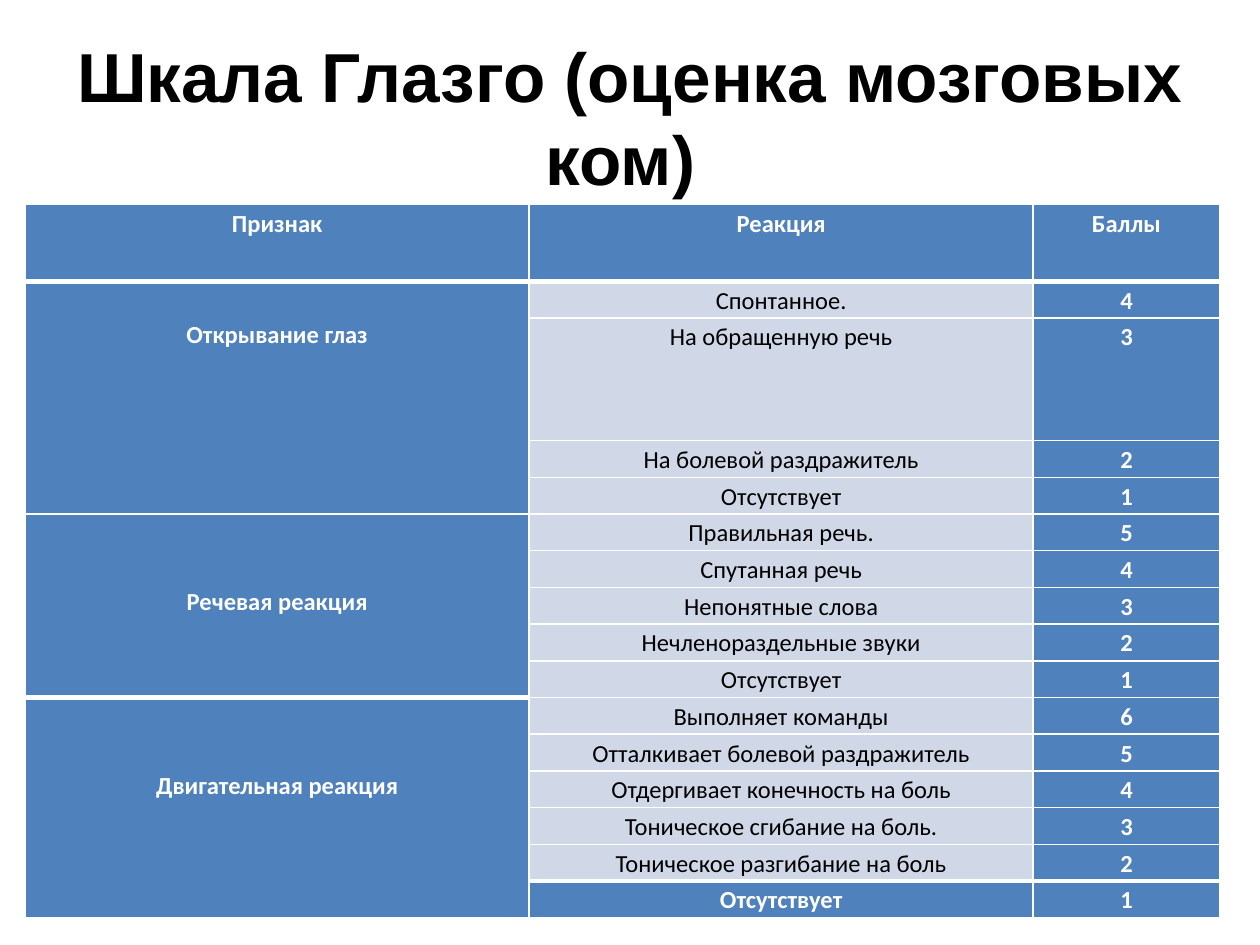
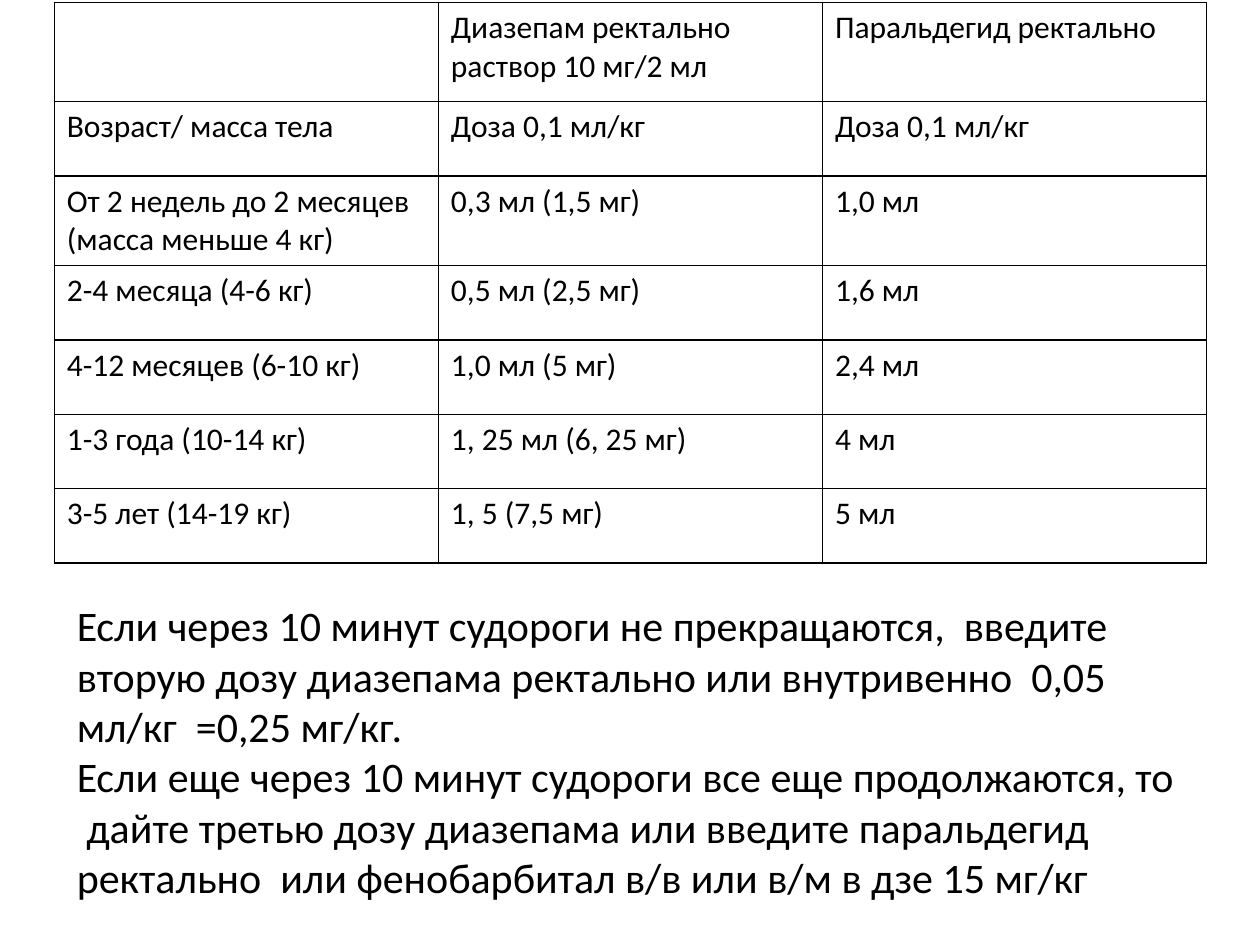
from lxml.etree import SubElement
from pptx import Presentation
from pptx.dml.color import RGBColor
from pptx.enum.text import MSO_ANCHOR, MSO_AUTO_SIZE, PP_ALIGN
from pptx.oxml.ns import qn
from pptx.util import Pt

# Shared look
WHITE, BLACK = "FFFFFF", "000000"
BLUE, PALE_BLUE = "4F81BD", "D0D8E8"
TITLE_ONLY = 5
LINE_STEP = 19.7  # height of one 14 pt line at 1.15 spacing

# Coma scale: sign, lines it is lowered by, reactions from the highest score to 1
COMA_HEADER = ["Признак", "Реакция", "Баллы"]
COMA_SIGNS = [
    ("Открывание глаз", 1, [
        "Спонтанное.", "На обращенную речь", "На болевой раздражитель",
        "Отсутствует"]),
    ("Речевая реакция", 2, [
        "Правильная речь.", "Спутанная речь", "Непонятные слова",
        "Нечленораздельные звуки", "Отсутствует"]),
    ("Двигательная реакция", 2, [
        "Выполняет команды", "Отталкивает болевой раздражитель",
        "Отдергивает конечность на боль", "Тоническое сгибание на боль.",
        "Тоническое разгибание на боль", "Отсутствует"]),
]
THICK_TOPS = {(1, 0), (1, 1), (1, 2), (10, 0), (15, 1), (15, 2)}

DOSES = [
    ["", "Диазепам ректально раствор 10 мг/2 мл", "Паральдегид ректально"],
    ["Возраст/ масса тела", "Доза 0,1 мл/кг", "Доза 0,1 мл/кг"],
    ["От 2 недель до 2 месяцев (масса меньше 4 кг)", "0,3 мл (1,5 мг)", "1,0 мл"],
    ["2-4 месяца (4-6 кг)", "0,5 мл (2,5 мг)", "1,6 мл"],
    ["4-12 месяцев (6-10 кг)", "1,0 мл (5 мг)", "2,4 мл"],
    ["1-3 года (10-14 кг)", "1, 25 мл (6, 25 мг)", "4 мл"],
    ["3-5 лет (14-19 кг)", "1, 5 (7,5 мг)", "5 мл"],
]
ADVICE = (
    "Если через 10 минут судороги не прекращаются,  введите вторую дозу "
    "диазепама ректально или внутривенно  0,05 мл/кг  =0,25 мг/кг. \v"
    "Если еще через 10 минут судороги все еще продолжаются, то  дайте третью "
    "дозу диазепама или введите паральдегид ректально  или фенобарбитал "
    "в/в или в/м в дзе 15 мг/кг")


def rgb(hex_code):
    return RGBColor.from_string(hex_code)


def format_text(frame, size, font, color, bold, align, spacing=None):
    for paragraph in frame.paragraphs:
        paragraph.alignment = align
        if spacing:
            paragraph.line_spacing = spacing
        for run in paragraph.runs:
            run.font.size, run.font.name, run.font.bold = Pt(size), font, bold
            run.font.color.rgb = rgb(color)


def place_title(slide, box, text, size, font, bold, align):
    title = slide.shapes.title
    title.left, title.top, title.width, title.height = map(Pt, box)
    frame = title.text_frame
    frame.text = text
    frame.auto_size = MSO_AUTO_SIZE.NONE
    frame.word_wrap = True
    frame.vertical_anchor = MSO_ANCHOR.MIDDLE
    format_text(frame, size, font, BLACK, bold, align)


def place_table(slide, left, top, widths, heights):
    """Add a plain table whose size is the sum of its columns and rows."""
    table = slide.shapes.add_table(
        len(heights), len(widths), Pt(left), Pt(top),
        Pt(sum(widths)), Pt(sum(heights))).table
    table.first_row = table.horz_banding = False
    for column, width in zip(table.columns, widths):
        column.width = Pt(width)
    for row, height in zip(table.rows, heights):
        row.height = Pt(height)
    return table


def set_borders(cell, color, top=1, bottom=1):
    properties = cell._tc.get_or_add_tcPr()
    sides = [("a:lnL", 1), ("a:lnR", 1), ("a:lnT", top), ("a:lnB", bottom)]
    for index, (side, width) in enumerate(sides):
        line = SubElement(properties, qn(side), w=str(Pt(width)))
        fill = SubElement(line, qn("a:solidFill"))
        SubElement(fill, qn("a:srgbClr"), val=color)
        properties.insert(index, line)


def fill_coma_cell(table, row, col, text, pale=False, lowered=0):
    cell = table.cell(row, col)
    cell.text_frame.text = text
    cell.margin_left = cell.margin_right = Pt(5)
    cell.margin_top, cell.margin_bottom = Pt(lowered * LINE_STEP), Pt(0)
    cell.fill.solid()
    cell.fill.fore_color.rgb = rgb(PALE_BLUE if pale else BLUE)
    format_text(cell.text_frame, 14, "Calibri", BLACK if pale else WHITE,
                not pale, PP_ALIGN.CENTER, 1.15)
    set_borders(cell, WHITE,
                top=3 if (row, col) in THICK_TOPS else 1,
                bottom=3 if (row + 1, col) in THICK_TOPS else 1)


def coma_table(slide, left, top):
    heights = [44, 21, 70] + [21] * 13
    table = place_table(slide, left, top, [288, 288, 106.6], heights)
    for col, heading in enumerate(COMA_HEADER):
        fill_coma_cell(table, 0, col, heading)
    row = 1
    for sign, lowered, reactions in COMA_SIGNS:
        first = row
        for score, reaction in zip(range(len(reactions), 0, -1), reactions):
            is_sign = row == first
            fill_coma_cell(table, row, 0, sign if is_sign else "",
                           lowered=lowered if is_sign else 0)
            fill_coma_cell(table, row, 1, reaction, pale=row < len(heights) - 1)
            fill_coma_cell(table, row, 2, str(score))
            row += 1
        table.cell(first, 0).merge(table.cell(row - 1, 0))


def dose_table(slide, left, top):
    heights = [56.6, 42.5, 43.2] + [42.5] * 4
    table = place_table(slide, left, top, [219.5] * 3, heights)
    for row, doses in enumerate(DOSES):
        for col, dose in enumerate(doses):
            cell = table.cell(row, col)
            cell.text_frame.text = dose
            cell.fill.background()
            format_text(cell.text_frame, 18, "Calibri", BLACK, False, PP_ALIGN.LEFT)
            set_borders(cell, BLACK)


def main():
    deck = Presentation()
    deck.slide_width, deck.slide_height = Pt(720), Pt(540)
    layout = deck.slide_layouts[TITLE_ONLY]

    # Coma scale
    coma_slide = deck.slides.add_slide(layout)
    place_title(coma_slide, (36, 21.6, 648, 90), "Шкала Глазго (оценка мозговых ком) ",
                39.6, "Arial", True, PP_ALIGN.CENTER)
    coma_table(coma_slide, 14.4, 116.8)

    # Doses against convulsions
    dose_slide = deck.slides.add_slide(layout)
    place_title(dose_slide, (36.7, 332.6, 642.2, 193), ADVICE,
                24, "Calibri", False, PP_ALIGN.LEFT)
    dose_table(dose_slide, 31, 1.5)

    deck.save("out.pptx")


if __name__ == "__main__":
    main()
